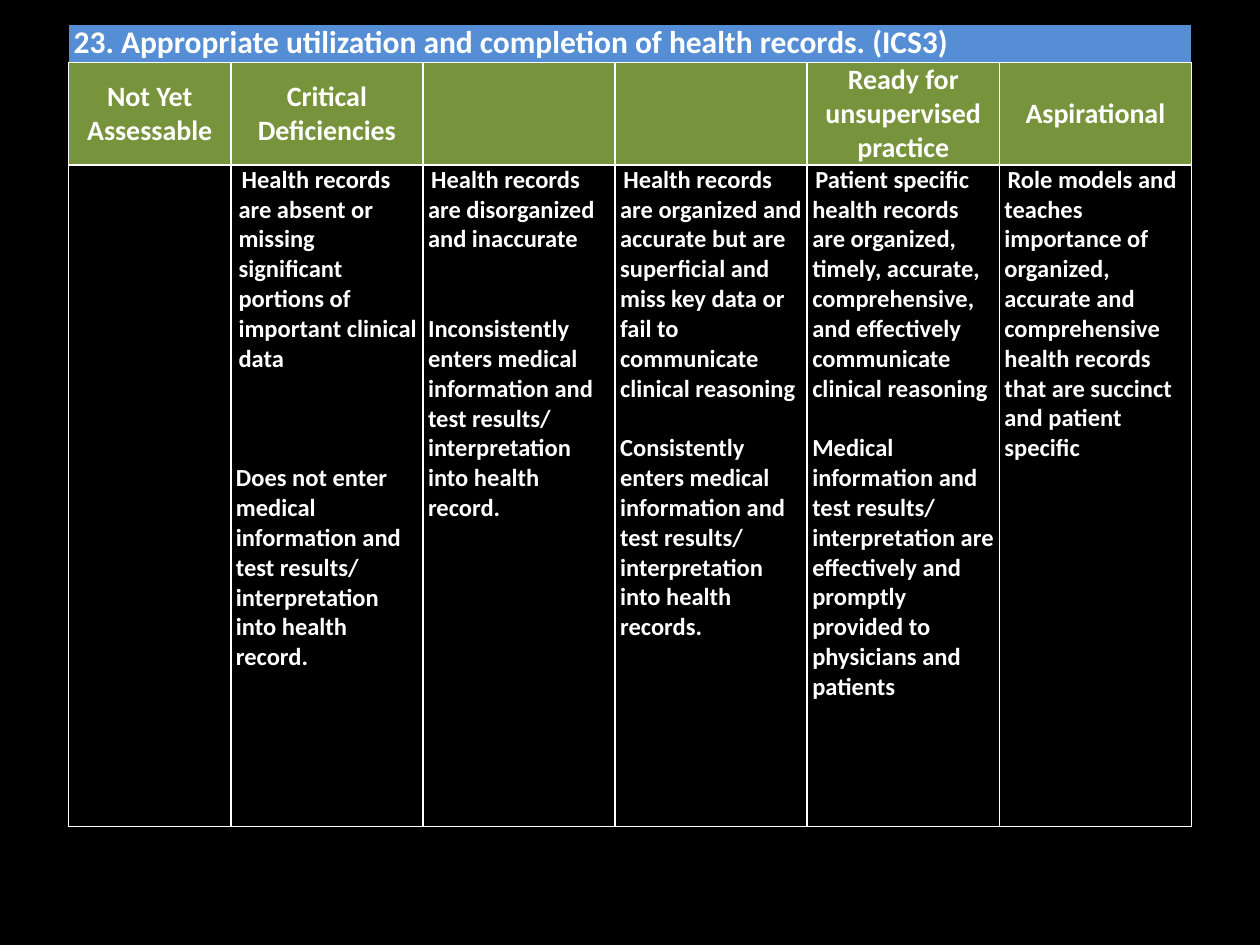
from lxml import etree
from pptx import Presentation
from pptx.dml.color import RGBColor
from pptx.enum.text import MSO_ANCHOR, PP_ALIGN
from pptx.oxml.ns import qn
from pptx.util import Pt

CENTER, LEFT = PP_ALIGN.CENTER, PP_ALIGN.LEFT
MIDDLE, TOP = MSO_ANCHOR.MIDDLE, MSO_ANCHOR.TOP

FONT = "Calibri"
WHITE, BLACK, BLUE, GREEN = "FFFFFF", "000000", "558ED5", "77933C"
LINE = 17.1  # one line of body text
FIRST_INDENT = 1.8

COLUMNS = [92.7] + [109.8] * 5
ROWS = [22, 58.5, 378]

TITLE = "23. Appropriate utilization and completion of health records. (ICS3)"
HEADERS = ["Not Yet Assessable", "Critical Deficiencies", "", "",
           "Ready for unsupervised practice", "Aspirational"]
# Each level: blank lines between the two paragraphs, then the paragraphs
LEVELS = [
    (0, []),
    (3, ["Health records are absent or missing significant portions of "
         "important clinical data",
         "Does not enter medical information and test results/ "
         "interpretation into health record."]),
    (2, ["Health records are disorganized and inaccurate",
         "Inconsistently enters medical information and test results/ "
         "interpretation into health record."]),
    (1, ["Health records are organized and accurate but are superficial and "
         "miss key data or fail to communicate clinical reasoning",
         "Consistently enters medical information and test results/ "
         "interpretation into health records."]),
    (1, ["Patient specific health records are organized, timely, accurate, "
         "comprehensive, and effectively communicate clinical reasoning",
         "Medical information and test results/ interpretation are "
         "effectively and promptly provided to physicians and patients"]),
    (0, ["Role models and teaches importance of organized, accurate and "
         "comprehensive health records that are succinct and patient "
         "specific"]),
]


def color(value):
    return RGBColor.from_string(value)


def set_borders(cell, left=WHITE, right=WHITE, top=WHITE, bottom=WHITE):
    tc_pr = cell._tc.get_or_add_tcPr()
    for side, value in zip("LRTB", (left, right, top, bottom)):
        ln = etree.SubElement(tc_pr, qn(f"a:ln{side}"), w=str(Pt(1)))
        fill = etree.SubElement(ln, qn("a:solidFill"))
        etree.SubElement(fill, qn("a:srgbClr"), val=value)


def style_cell(cell, fill=None, anchor=TOP):
    cell.margin_left = cell.margin_right = Pt(2.9)
    cell.margin_top = cell.margin_bottom = Pt(0)
    cell.vertical_anchor = anchor
    if fill:
        cell.fill.solid()
        cell.fill.fore_color.rgb = color(fill)
    else:
        cell.fill.background()


def write(p, text, size, align=LEFT):
    p.alignment = align
    if text:
        r = p.add_run()
        r.text = text
        r.font.name, r.font.size, r.font.bold = FONT, Pt(size), True
        r.font.color.rgb = color(WHITE)


def indent(p, left, first):
    p_pr = p._p.get_or_add_pPr()
    p_pr.set("marL", str(Pt(left)))
    p_pr.set("indent", str(Pt(first)))


def write_level(cell, gap, texts, left):
    tf = cell.text_frame
    for i, text in enumerate(texts):
        p = tf.add_paragraph() if i else tf.paragraphs[0]
        write(p, text, 14)
        if i:
            p.space_before = Pt(gap * LINE)
        else:
            indent(p, left, FIRST_INDENT)


def add_grid(slide):
    frame = slide.shapes.add_table(len(ROWS), len(COLUMNS), Pt(39.2), Pt(13.6),
                                   Pt(sum(COLUMNS)), Pt(sum(ROWS)))
    table = frame.table
    table.first_row = table.horz_banding = False
    for column, width in zip(table.columns, COLUMNS):
        column.width = Pt(width)
    for row, height in zip(table.rows, ROWS):
        row.height = Pt(height)
    return table


def main():
    prs = Presentation()
    prs.slide_width, prs.slide_height = Pt(720), Pt(540)
    slide = prs.slides.add_slide(prs.slide_layouts[6])
    slide.background.fill.solid()
    slide.background.fill.fore_color.rgb = color(BLACK)
    table = add_grid(slide)

    # Title band
    title = table.cell(0, 0)
    title.merge(table.cell(0, len(COLUMNS) - 1))
    for cell in table.rows[0].cells:
        set_borders(cell, left=BLACK, right=BLACK, top=BLACK)
        style_cell(cell, BLUE)
    write(title.text_frame.paragraphs[0], TITLE, 18)

    # Level headings and their descriptions
    for col, (header, (gap, texts)) in enumerate(zip(HEADERS, LEVELS)):
        head, body = table.cell(1, col), table.cell(2, col)
        set_borders(head)
        style_cell(head, GREEN, MIDDLE)
        write(head.text_frame.paragraphs[0], header, 16, CENTER)
        set_borders(body)
        style_cell(body)
        write_level(body, gap, texts, left=1.5 if col == 1 else 0)

    prs.save("out.pptx")


if __name__ == "__main__":
    main()
